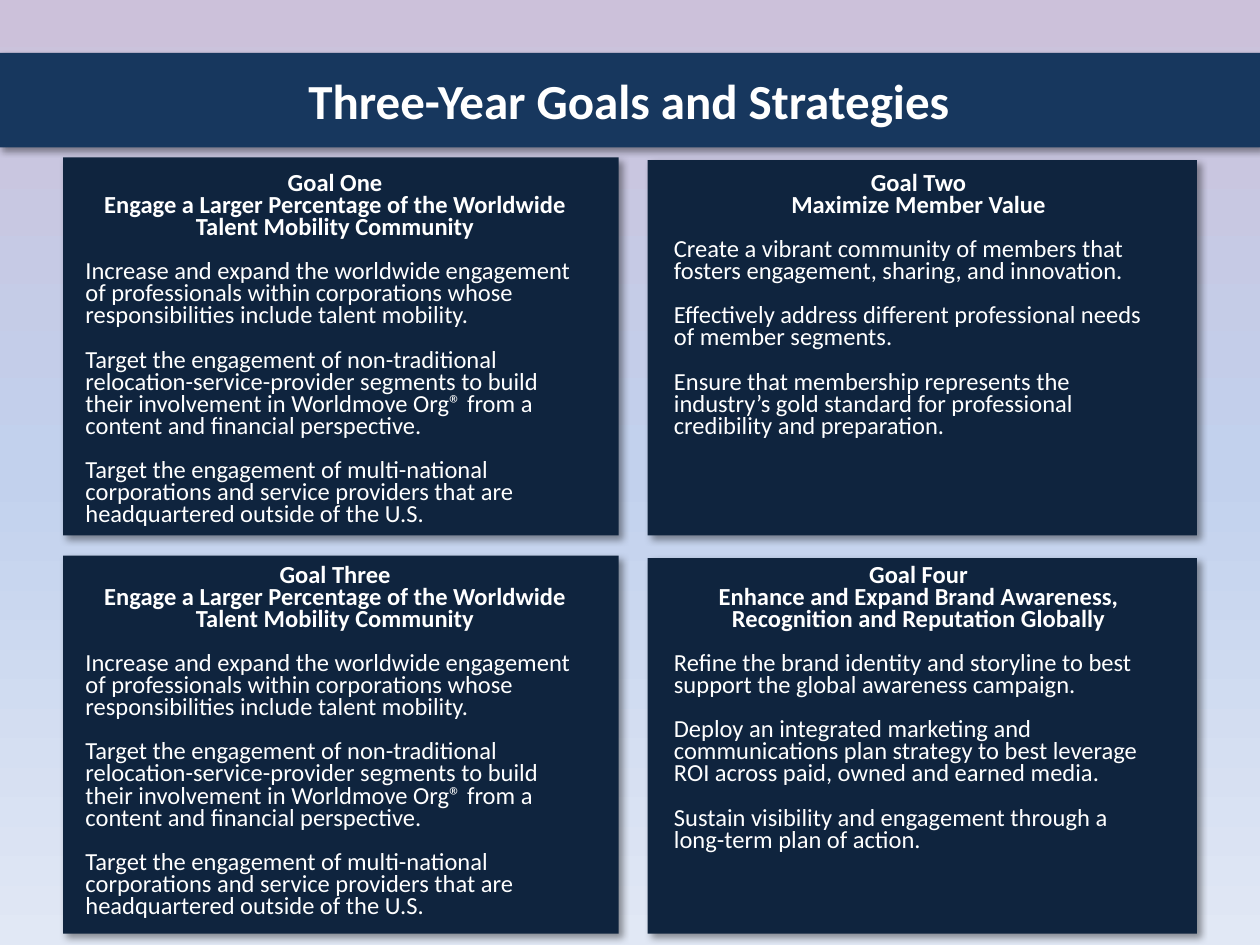
import lxml.etree
import pptx
import pptx.dml.color
import pptx.enum.shapes
import pptx.enum.text
import pptx.oxml
import pptx.oxml.ns
import pptx.util
from pptx.util import Inches

ALIGN = pptx.enum.text.PP_ALIGN
QN = pptx.oxml.ns.qn


def rgb(value):
    """Turn a hex string into a colour."""
    return pptx.dml.color.RGBColor.from_string(value)


def write(para, text, size=14, bold=False, align=ALIGN.LEFT, spacing=None,
          before=0, color="FFFFFF", font="Calibri"):
    """Fill a paragraph with one formatted span."""
    para.alignment = align
    para.space_before = pptx.util.Pt(before)
    if spacing:
        para.line_spacing = spacing
    span = para.add_run()
    span.text = text
    span.font.name = font
    span.font.size = pptx.util.Pt(size)
    span.font.bold = bold
    span.font.color.rgb = rgb(color)


class GoalSlide:
    """Hold the style and the current slide."""

    banner = "17375E"
    panel = "0F243E"
    spacing = 0.75
    gap = 12.6

    def __init__(self, deck):
        """Add a title-only slide to the deck."""
        self.page = deck.slides.add_slide(deck.slide_layouts[5])

    def background(self, stops):
        """Paint a vertical gradient behind the slide."""
        fill = self.page.background.fill
        fill.gradient()
        fill.gradient_angle = 270
        stop_list = self.page.background._cSld.find(".//" + QN("a:gsLst"))
        for stop in list(stop_list):
            stop_list.remove(stop)
        for percent, color in stops:
            stop = lxml.etree.SubElement(stop_list, QN("a:gs"), pos=str(percent * 1000))
            lxml.etree.SubElement(stop, QN("a:srgbClr"), val=color)

    def block(self, left, top, width, height, color):
        """Draw a filled rectangle with a soft shadow."""
        shape = self.page.shapes.add_shape(
            pptx.enum.shapes.MSO_SHAPE.RECTANGLE,
            Inches(left), Inches(top), Inches(width), Inches(height))
        shape.fill.solid()
        shape.fill.fore_color.rgb = rgb(color)
        shape.line.fill.background()
        shape.shadow.inherit = False
        effects = shape._element.spPr.find(QN("a:effectLst"))
        shadow = lxml.etree.SubElement(
            effects, QN("a:outerShdw"), blurRad=str(pptx.util.Pt(4)),
            dist=str(pptx.util.Pt(3)), dir="2700000", algn="tl", rotWithShape="0")
        tint = lxml.etree.SubElement(shadow, QN("a:srgbClr"), val="000000")
        lxml.etree.SubElement(tint, QN("a:alpha"), val="40000")

    def title(self, text):
        """Place the title over its banner."""
        self.block(-0.02, 0.42, 10.02, 0.75, self.banner)
        box = self.page.shapes.title
        box.left, box.top = Inches(0.49), Inches(0.26)
        box.width, box.height = Inches(9), Inches(1.07)
        box.text_frame.vertical_anchor = pptx.enum.text.MSO_ANCHOR.MIDDLE
        write(box.text_frame.paragraphs[0], text, size=28, bold=True, align=ALIGN.CENTER)
        tree = self.page.shapes._spTree
        tree.remove(box._element)
        tree.append(box._element)

    def goal(self, left, top, width, height, heading, strategies):
        """Write a goal's two heading lines and its strategies."""
        box = self.page.shapes.add_textbox(
            Inches(left), Inches(top), Inches(width), Inches(height))
        frame = box.text_frame
        frame.word_wrap = True
        frame.auto_size = pptx.enum.text.MSO_AUTO_SIZE.SHAPE_TO_FIT_TEXT
        for index, text in enumerate(heading):
            para = frame.add_paragraph() if index else frame.paragraphs[0]
            write(para, text, bold=True, align=ALIGN.CENTER, spacing=self.spacing)
        for text in strategies:
            write(frame.add_paragraph(), text, spacing=self.spacing, before=self.gap)


ENGAGE = "Engage a Larger Percentage of the Worldwide Talent Mobility Community"
ENGAGE_STRATEGIES = [
    "Increase and expand the worldwide engagement of professionals within "
    "corporations whose responsibilities include talent mobility.",
    "Target the engagement of non-traditional relocation-service-provider segments "
    "to build their involvement in Worldmove Org® from a content and financial "
    "perspective.",
    "Target the engagement of multi-national corporations and service providers "
    "that are headquartered outside of the U.S.",
]
GOALS = [
    (("Goal One", ENGAGE), ENGAGE_STRATEGIES, 3.09),
    (("Goal Two", "Maximize Member Value"), [
        "Create a vibrant community of members that fosters engagement, sharing, "
        "and innovation.",
        "Effectively address different professional needs of member segments.",
        "Ensure that membership represents the industry’s gold standard for "
        "professional credibility and preparation.",
    ], 2.39),
    (("Goal Three", ENGAGE), ENGAGE_STRATEGIES, 3.11),
    (("Goal Four",
      "Enhance and Expand Brand Awareness, Recognition and Reputation Globally"), [
        "Refine the brand identity and storyline to best support the global "
        "awareness campaign.",
        "Deploy an integrated marketing and communications plan strategy to best "
        "leverage ROI across paid, owned and earned media.",
        "Sustain visibility and engagement through a long-term plan of action.",
    ], 2.56),
]
PANEL_COLUMNS = [(0.5, 1.25, 4.41, 3), (5.14, 1.27, 4.36, 2.98)]
TEXT_COLUMNS = [(0.58, 4.16), (5.25, 4.08)]
TEXT_ROWS = [1.33, 4.44]
PANEL_PITCH = 3.16


def main():
    """Build the goals slide and save it."""
    deck = pptx.Presentation()
    deck.slide_width, deck.slide_height = Inches(10), Inches(7.5)
    slide = GoalSlide(deck)
    slide.background([(0, "CCC1DA"), (50, "C2D1ED"), (100, "E1E8F5")])
    slide.title("Three-Year Goals and Strategies")
    for index in range(len(GOALS)):
        row, column = divmod(index, 2)
        left, top, width, height = PANEL_COLUMNS[column]
        slide.block(left, top + row * PANEL_PITCH, width, height, slide.panel)
    for index, (heading, strategies, height) in enumerate(GOALS):
        row, column = divmod(index, 2)
        left, width = TEXT_COLUMNS[column]
        slide.goal(left, TEXT_ROWS[row], width, height, heading, strategies)
    deck.save("out.pptx")


if __name__ == "__main__":
    main()
